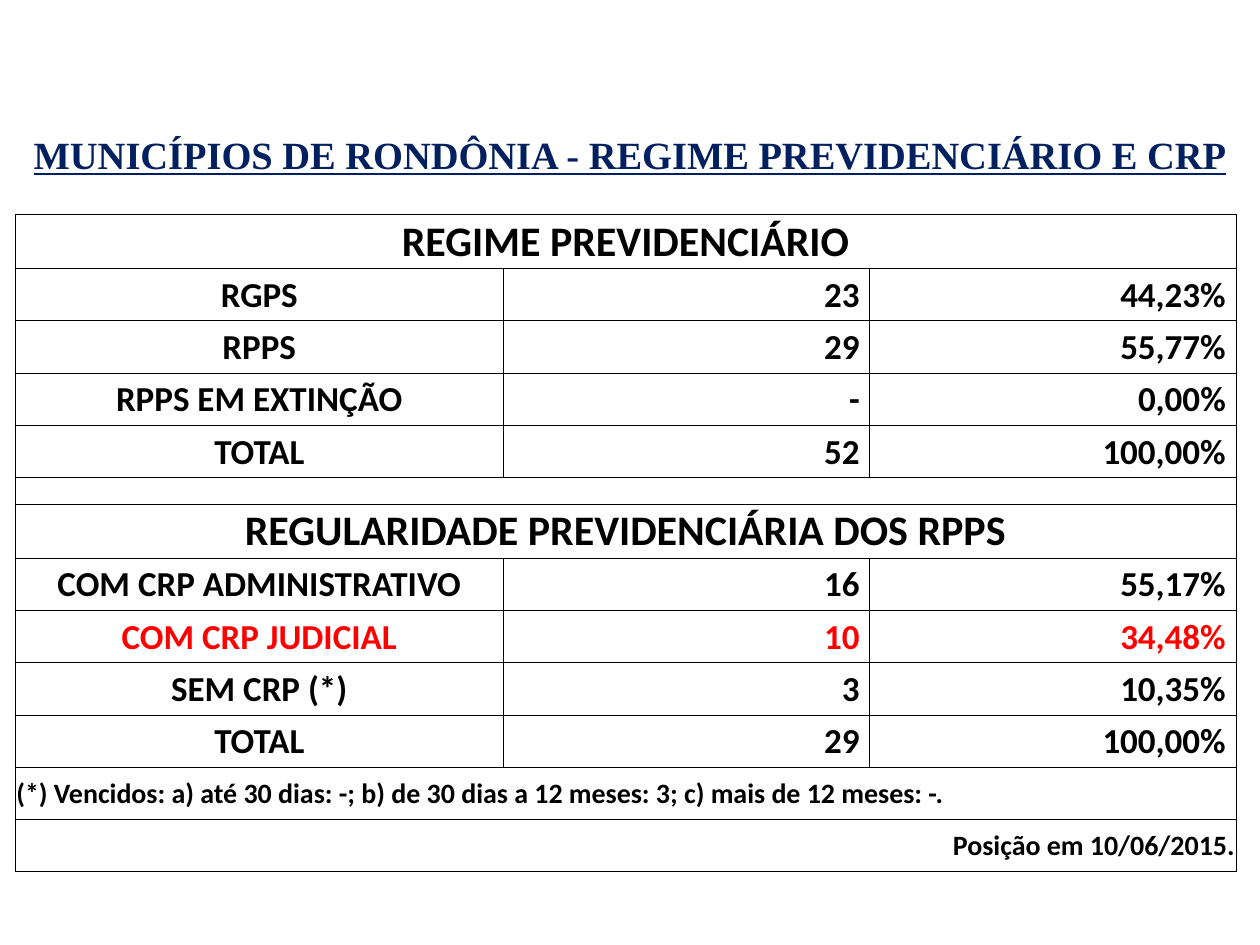
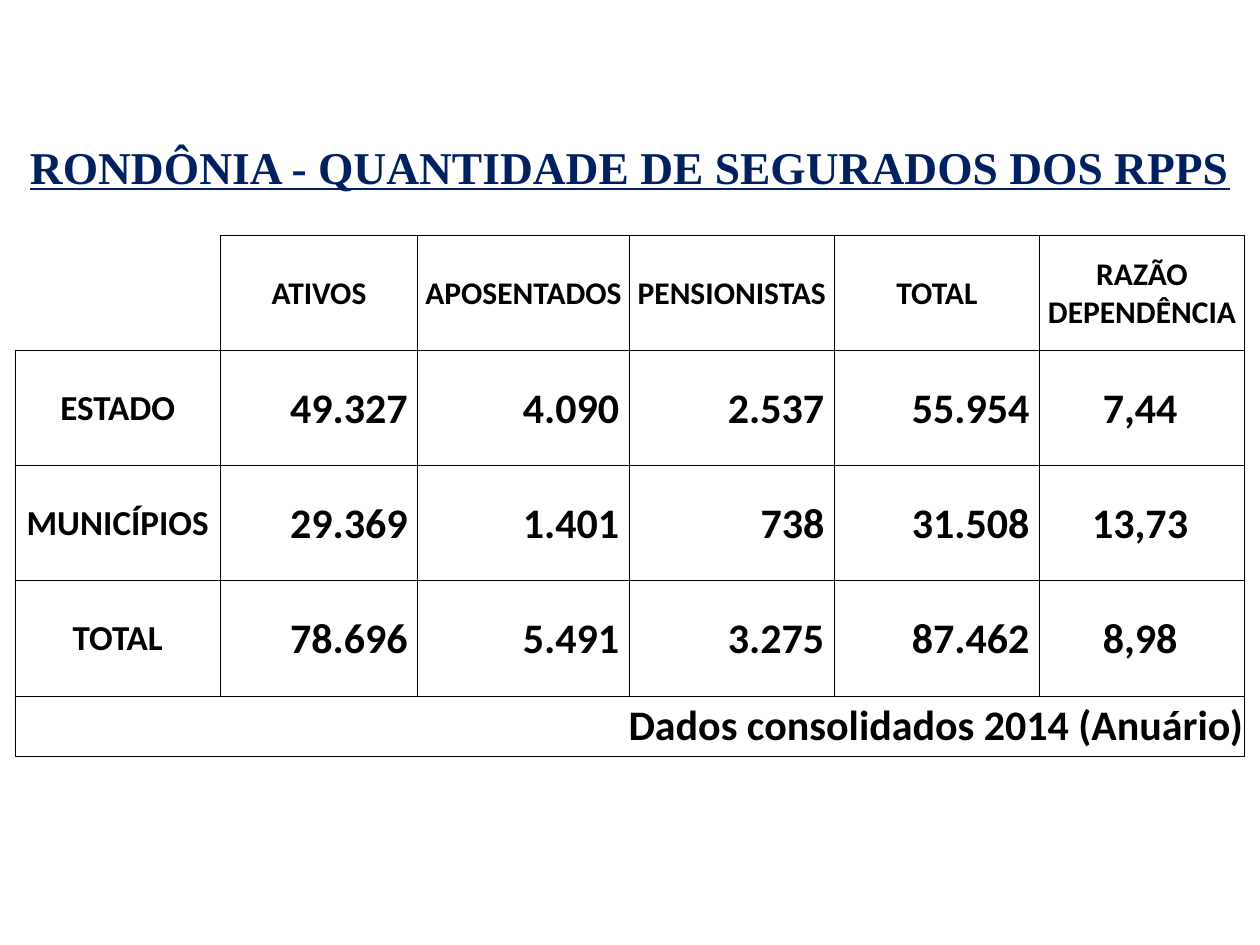
from collections import namedtuple

from lxml import etree
from pptx import Presentation
from pptx import util as u
from pptx.dml.color import RGBColor
from pptx.enum import text as t
from pptx.oxml.ns import qn

COLOURS = {"title": "002060", "ink": "000000", "alert": "FF0000", "paper": "FFFFFF"}
TITLE_FONT, TABLE_FONT = "Times New Roman", "Calibri"
SLIDE_WIDTH, SLIDE_HEIGHT = u.Inches(10), u.Inches(7.5)
GRID = 100
LEFT, CENTER, RIGHT = t.PP_ALIGN.LEFT, t.PP_ALIGN.CENTER, t.PP_ALIGN.RIGHT
EDGES = ("L", "R", "T", "B")
EDGE_MARGIN, NUMBER_MARGIN, RATIO_MARGIN = 0.01, 0.08, 0.04

Box = namedtuple("Box", "column row columns rows")


def place(box):
    return (
        round(SLIDE_WIDTH * box.column / GRID),
        round(SLIDE_HEIGHT * box.row / GRID),
        round(SLIDE_WIDTH * box.columns / GRID),
        round(SLIDE_HEIGHT * box.rows / GRID),
    )


def write_text(frame, words, size=20, font=TABLE_FONT, colour="ink", align=CENTER,
               underline=None):
    paragraph = frame.paragraphs[0]
    paragraph.alignment = align
    run = paragraph.add_run()
    run.text = words
    run.font.name = font
    run.font.size = u.Pt(size)
    run.font.bold = True
    run.font.underline = underline
    run.font.color.rgb = RGBColor.from_string(COLOURS[colour])


def add_title(slide, box, words, size):
    title = slide.shapes.title
    title.left, title.top, title.width, title.height = place(box)
    frame = title.text_frame
    frame.word_wrap = True
    frame.auto_size = t.MSO_AUTO_SIZE.NONE
    frame.vertical_anchor = t.MSO_ANCHOR.TOP
    frame.margin_left = frame.margin_right = u.Inches(0.05)
    write_text(frame, words, size=size, font=TITLE_FONT, colour="title", underline=True)


def draw_borders(cell, hidden=()):
    properties = cell._tc.get_or_add_tcPr()
    for edge in EDGES:
        line = etree.SubElement(properties, qn(f"a:ln{edge}"), w=str(u.Pt(0.5)))
        if edge in hidden:
            etree.SubElement(line, qn("a:noFill"))
        else:
            ink = etree.SubElement(line, qn("a:solidFill"))
            etree.SubElement(ink, qn("a:srgbClr"), val=COLOURS["ink"])


def add_grid(slide, box, column_shares, row_shares, open_corner=False):
    left, top, width, height = place(box)
    grid = slide.shapes.add_table(
        len(row_shares), len(column_shares), left, top, width, height).table
    grid.first_row = grid.horz_banding = False
    for column, share in zip(grid.columns, column_shares):
        column.width = round(width * share / sum(column_shares))
    for row, share in zip(grid.rows, row_shares):
        row.height = round(height * share / sum(row_shares))
    for index, cell in enumerate(grid.iter_cells()):
        draw_borders(cell, hidden="LT" if open_corner and index == 0 else "")
        cell.fill.solid()
        cell.fill.fore_color.rgb = RGBColor.from_string(COLOURS["paper"])
        cell.vertical_anchor = t.MSO_ANCHOR.MIDDLE
        cell.margin_left = cell.margin_top = cell.margin_right = u.Inches(EDGE_MARGIN)
        cell.margin_bottom = 0
    return grid


def fill_cell(cell, words, margin=EDGE_MARGIN, **text_format):
    cell.margin_right = u.Inches(margin)
    write_text(cell.text_frame, words, **text_format)


def merge_row(grid, row):
    first = grid.cell(row, 0)
    first.merge(grid.cell(row, len(grid.columns) - 1))
    return first


def fill_section(grid, top_row, heading, entries):
    fill_cell(merge_row(grid, top_row), heading, size=24)
    for row, (label, *figures) in enumerate(entries, top_row + 1):
        colour = "alert" if label == "COM CRP JUDICIAL" else "ink"
        fill_cell(grid.cell(row, 0), label, colour=colour)
        for column, figure in enumerate(figures, 1):
            fill_cell(grid.cell(row, column), figure, margin=NUMBER_MARGIN,
                      colour=colour, align=RIGHT)


def build_regime_slide(slide):
    add_title(slide, Box(0, 13.2, 100, 6.27),
              "MUNICÍPIOS DE RONDÔNIA - REGIME PREVIDENCIÁRIO E CRP", 22)
    heading, entry, gap = 43, 41.5, 21
    section = [heading] + [entry] * 4
    grid = add_grid(slide, Box(1.2, 22.67, 96.9, 69.6), [4, 3, 3],
                    section + [gap] + section + [entry] * 2)
    fill_section(grid, 0, "REGIME PREVIDENCIÁRIO", [
        ("RGPS", "23", "44,23%"),
        ("RPPS", "29", "55,77%"),
        ("RPPS EM EXTINÇÃO", "-", "0,00%"),
        ("TOTAL", "52", "100,00%"),
    ])
    gap_row = len(section)
    gap_paragraph = merge_row(grid, gap_row).text_frame.paragraphs[0]
    etree.SubElement(gap_paragraph._p, qn("a:endParaRPr"), sz="800")
    fill_section(grid, gap_row + 1, "REGULARIDADE PREVIDENCIÁRIA DOS RPPS", [
        ("COM CRP ADMINISTRATIVO", "16", "55,17%"),
        ("COM CRP JUDICIAL", "10", "34,48%"),
        ("SEM CRP (*)", "3", "10,35%"),
        ("TOTAL", "29", "100,00%"),
    ])
    footnotes = [
        ("(*) Vencidos: a) até 30 dias: -; b) de 30 dias a 12 meses: 3; "
         "c) mais de 12 meses: -.", LEFT),
        ("Posição em 10/06/2015.", RIGHT),
    ]
    for row, (note, align) in enumerate(footnotes, 2 * len(section) + 1):
        fill_cell(merge_row(grid, row), note, size=16, align=align)


def build_insured_slide(slide):
    add_title(slide, Box(1.2, 14, 97.6, 10.27),
              "RONDÔNIA - QUANTIDADE DE SEGURADOS DOS RPPS", 26)
    grid = add_grid(slide, Box(1.2, 24.93, 97.6, 55.07),
                    [163, 157, 168, 163, 163, 163], [23] * 4 + [12], open_corner=True)
    headings = ["ATIVOS", "APOSENTADOS", "PENSIONISTAS", "TOTAL", "RAZÃO DEPENDÊNCIA"]
    for column, heading in enumerate(headings, 1):
        fill_cell(grid.cell(0, column), heading, size=18)
    entries = [
        ("ESTADO", "49.327", "4.090", "2.537", "55.954", "7,44"),
        ("MUNICÍPIOS", "29.369", "1.401", "738", "31.508", "13,73"),
        ("TOTAL", "78.696", "5.491", "3.275", "87.462", "8,98"),
    ]
    for row, (label, *counts, ratio) in enumerate(entries, 1):
        fill_cell(grid.cell(row, 0), label)
        for column, count in enumerate(counts, 1):
            fill_cell(grid.cell(row, column), count, margin=NUMBER_MARGIN,
                      size=24, align=RIGHT)
        fill_cell(grid.cell(row, len(headings)), ratio, margin=RATIO_MARGIN, size=24)
    fill_cell(merge_row(grid, len(entries) + 1), "Dados consolidados 2014 (Anuário)",
              size=24, align=RIGHT)


def main():
    deck = Presentation()
    deck.slide_width, deck.slide_height = SLIDE_WIDTH, SLIDE_HEIGHT
    title_only = deck.slide_layouts[5]
    for build in (build_regime_slide, build_insured_slide):
        build(deck.slides.add_slide(title_only))
    deck.save("out.pptx")


if __name__ == "__main__":
    main()
